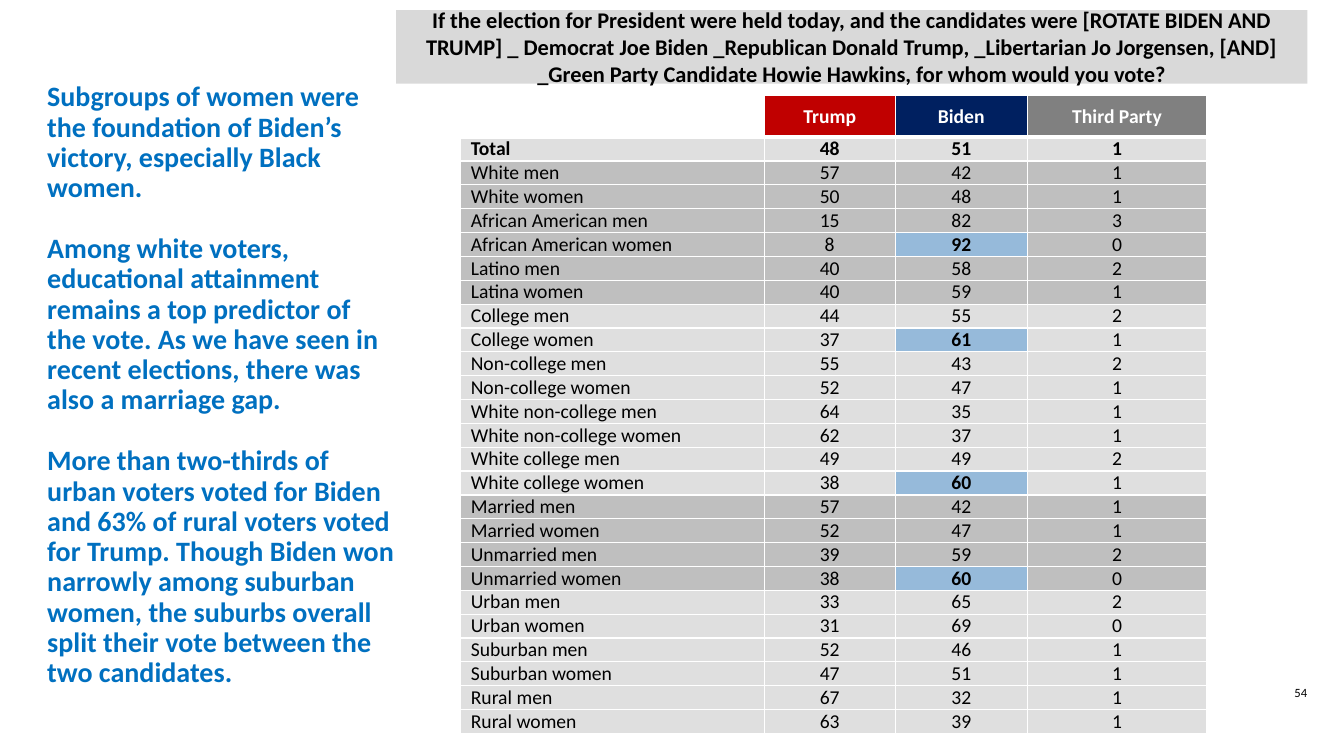
"""Build the slide on how subgroups of women and men voted for President."""
from lxml.etree import SubElement
from pptx import Presentation
from pptx.dml.color import RGBColor
from pptx.enum.shapes import MSO_SHAPE as Preset
from pptx.enum.text import MSO_ANCHOR as Anchor, PP_ALIGN as Align
from pptx.oxml.ns import qn
from pptx.util import Inches, Pt

COLORS = {
    "black": "000000", "white": "FFFFFF", "message": "0070C0", "banner": "D9D9D9",
    "trump": "C00000", "biden": "002060", "third": "808080",
    "light": "DFDFDF", "dark": "BFBFBF", "highlight": "96BADA",
}

presentation = Presentation()
presentation.slide_width, presentation.slide_height = Inches(13.33), Inches(7.5)
slide = presentation.slides.add_slide(presentation.slide_layouts[6])
COLUMN = presentation.slide_width / 100
ROW = presentation.slide_height / 100


def place(left, top, width, height):
    return [round(size) for size in (left * COLUMN, top * ROW, width * COLUMN, height * ROW)]


def write(frame, texts, size, color, bold=False, **layout):
    for index, text in enumerate(texts):
        paragraph = frame.paragraphs[0] if index == 0 else frame.add_paragraph()
        for name, value in layout.items():
            if index or name != "space_before":
                setattr(paragraph, name, value)
        run = paragraph.add_run()
        run.text = text
        for name, value in {"name": "Calibri", "size": Pt(size), "bold": bold}.items():
            setattr(run.font, name, value)
        run.font.color.rgb = RGBColor.from_string(COLORS[color])


number = slide.shapes.add_textbox(*place(93.98, 90, 5.63, 4.4)).text_frame
number.word_wrap = True
write(number, ["54"], 9, "black", alignment=Align.CENTER)

message = slide.shapes.add_textbox(*place(2.78, 4.67, 27.38, 92.67)).text_frame
message.word_wrap, message.vertical_anchor = True, Anchor.MIDDLE
write(message, [
    "Subgroups of women were the foundation of Biden’s victory, especially Black women.",
    "Among white voters, educational attainment remains a top predictor of the vote. "
    "As we have seen in recent elections, there was also a marriage gap.",
    "More than two-thirds of urban voters voted for Biden and 63% of rural voters voted "
    "for Trump. Though Biden won narrowly among suburban women, the suburbs overall "
    "split their vote between the two candidates.",
], 20, "message", True, line_spacing=0.9, space_before=Pt(22), alignment=Align.LEFT)

banner = slide.shapes.add_shape(Preset.RECTANGLE, *place(29.48, 1.33, 67.8, 9.73))
banner.shadow.inherit = False
banner.fill.solid()
banner.fill.fore_color.rgb = RGBColor.from_string(COLORS["banner"])
banner.line.fill.background()
banner.text_frame.word_wrap, banner.text_frame.vertical_anchor = True, Anchor.MIDDLE
write(banner.text_frame, [
    "If the election for President were held today, and the candidates were [ROTATE BIDEN "
    "AND TRUMP] _ Democrat Joe Biden _Republican Donald Trump, _Libertarian Jo Jorgensen, "
    "[AND] _Green Party Candidate Howie Hawkins, for whom would you vote?",
], 16, "black", True, alignment=Align.CENTER)

HEADER = ["", "Trump", "Biden", "Third Party"]
HEADER_FILLS = ["white", "trump", "biden", "third"]
BANDS = [
    ("light", [("Total", 48, 51, 1)]),
    ("dark", [
        ("White men", 57, 42, 1), ("White women", 50, 48, 1),
        ("African American men", 15, 82, 3), ("African American women", 8, 92, 0),
        ("Latino men", 40, 58, 2), ("Latina women", 40, 59, 1),
    ]),
    ("light", [
        ("College men", 44, 55, 2), ("College women", 37, 61, 1),
        ("Non-college men", 55, 43, 2), ("Non-college women", 52, 47, 1),
        ("White non-college men", 64, 35, 1), ("White non-college women", 62, 37, 1),
        ("White college men", 49, 49, 2), ("White college women", 38, 60, 1),
    ]),
    ("dark", [
        ("Married men", 57, 42, 1), ("Married women", 52, 47, 1),
        ("Unmarried men", 39, 59, 2), ("Unmarried women", 38, 60, 0),
    ]),
    ("light", [
        ("Urban men", 33, 65, 2), ("Urban women", 31, 69, 0),
        ("Suburban men", 52, 46, 1), ("Suburban women", 47, 51, 1),
        ("Rural men", 67, 32, 1), ("Rural women", 63, 39, 1),
    ]),
]
HIGHLIGHTED = {"African American women", "College women", "White college women", "Unmarried women"}
COLUMN_SHARES = [22.58, 9.75, 9.83, 13.35]
HEADER_SHARE, ROW_SHARE = 5.47, 3.16

rows = [(HEADER, HEADER_FILLS)]
rows += [(values, [fill] * len(HEADER)) for fill, group in BANDS for values in group]
table_height = HEADER_SHARE + ROW_SHARE * (len(rows) - 1)
table = slide.shapes.add_table(
    len(rows), len(HEADER), *place(34.28, 12.67, sum(COLUMN_SHARES), table_height)).table
table.first_row = table.horz_banding = False
for column, share in zip(table.columns, COLUMN_SHARES):
    column.width = round(share * COLUMN)

for row_index, (values, fills) in enumerate(rows):
    is_header = row_index == 0
    table.rows[row_index].height = round((HEADER_SHARE if is_header else ROW_SHARE) * ROW)
    for column_index, (value, fill) in enumerate(zip(values, fills)):
        cell = table.cell(row_index, column_index)
        cell.vertical_anchor = Anchor.MIDDLE
        if not is_header:
            cell.margin_top = cell.margin_bottom = 0
        highlighted = values[0] in HIGHLIGHTED and HEADER[column_index] == "Biden"
        properties = cell._tc.get_or_add_tcPr()
        thick_side = {0: "lnB", 1: "lnT"}.get(row_index)
        for side in ("lnL", "lnR", "lnT", "lnB"):
            border = SubElement(properties, qn(f"a:{side}"), w=str(Pt(3 if side == thick_side else 1)))
            SubElement(SubElement(border, qn("a:solidFill")), qn("a:srgbClr"), val=COLORS["white"])
        cell.fill.solid()
        cell.fill.fore_color.rgb = RGBColor.from_string(COLORS["highlight" if highlighted else fill])
        if value != "":
            write(cell.text_frame, [str(value)], 14, "white" if is_header else "black",
                  row_index < 2 or highlighted,
                  alignment=Align.CENTER if column_index else Align.LEFT)

presentation.save("out.pptx")
